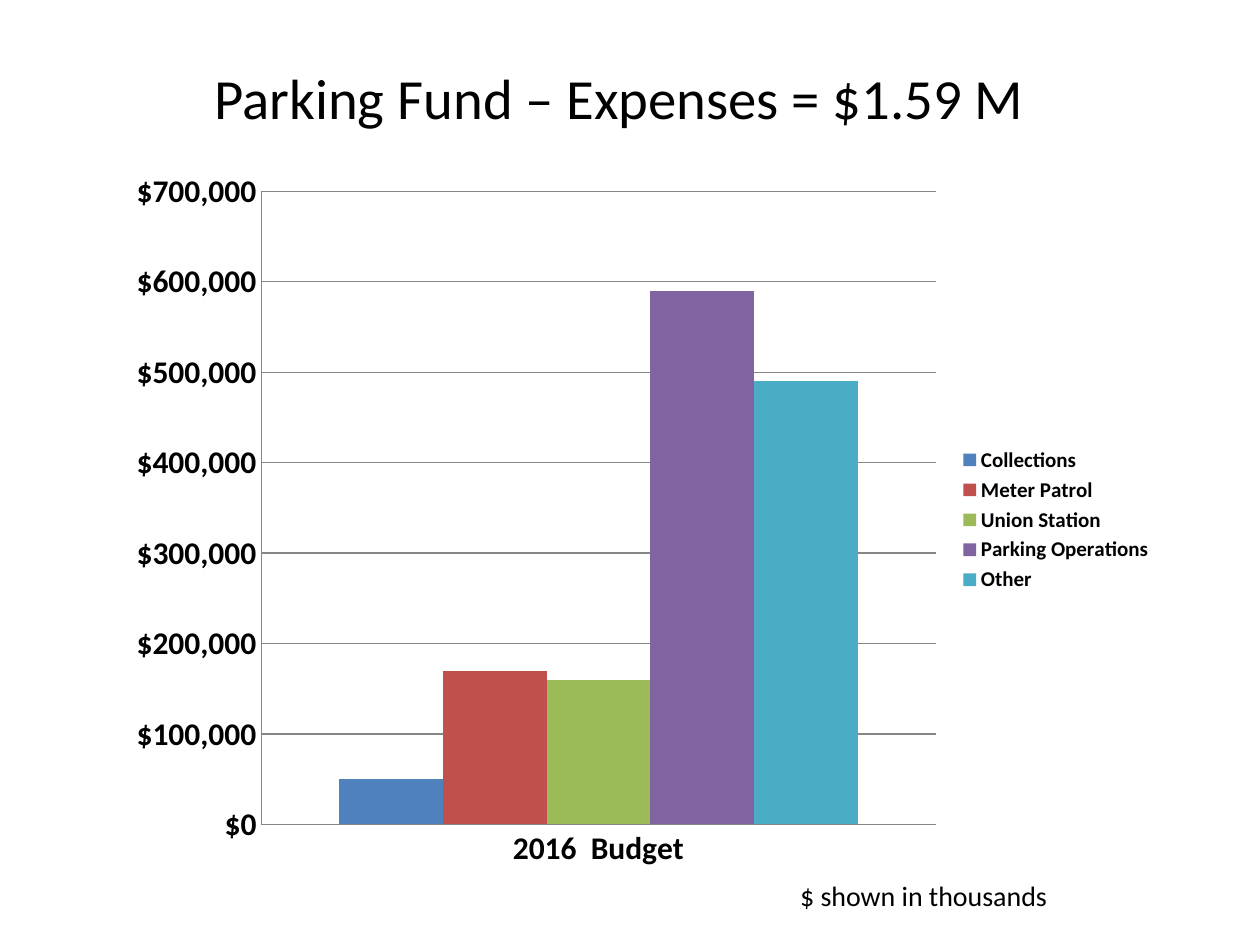
from pptx import Presentation
from pptx.chart.data import CategoryChartData
from pptx.dml.color import RGBColor
from pptx.enum import chart as charts, text
from pptx.util import Cm, Pt


def paint(target, color):
    target.solid()
    target.fore_color.rgb = RGBColor.from_string(color)


def add_text(page, wording, left, top, width, height, size, align, anchor):
    box = page.shapes.add_textbox(Cm(left), Cm(top), Cm(width), Cm(height))
    frame = box.text_frame
    frame.text = wording
    frame.word_wrap = True
    frame.vertical_anchor = anchor
    para = frame.paragraphs[0]
    para.alignment = align
    span = para.runs[0]
    span.font.name = "Calibri"
    span.font.size = Pt(size)
    paint(span.font.fill, "000000")


deck = Presentation()
deck.slide_width = Cm(25.4)
deck.slide_height = Cm(19.05)
page = deck.slides.add_slide(deck.slide_layouts[6])
paint(page.background.fill, "FFFFFF")

add_text(page, "Parking Fund – Expenses = $1.59 M", 1.9, 1.06, 21.17, 1.78, 32.4,
         text.PP_ALIGN.CENTER, text.MSO_ANCHOR.MIDDLE)

expenses = [
    ("Collections", 50000, "4F81BD"),
    ("Meter Patrol", 170000, "C0504D"),
    ("Union Station", 160000, "9BBB59"),
    ("Parking Operations", 590000, "8064A2"),
    ("Other", 490000, "4BACC6"),
]
data = CategoryChartData(number_format='"$"#,##0')
data.categories = ["2016  Budget"]
for name, amount, color in expenses:
    data.add_series(name, [amount])

chart = page.shapes.add_chart(charts.XL_CHART_TYPE.COLUMN_CLUSTERED,
                              Cm(2.33), Cm(3.18), Cm(21.17), Cm(14.6), data).chart
chart.has_title = False
chart.font.name = "Calibri"
chart.font.size = Pt(18)
paint(chart.font.fill, "000000")

plot = chart.plots[0]
plot.gap_width = 150
plot.overlap = 0
plot.vary_by_categories = False
for series, (name, amount, color) in zip(plot.series, expenses):
    paint(series.format.fill, color)

amounts = chart.value_axis
amounts.minimum_scale = 0
amounts.maximum_scale = 700000
amounts.major_unit = 100000
amounts.has_major_gridlines = True
amounts.tick_labels.number_format = '"$"#,##0'
amounts.tick_labels.number_format_is_linked = False
for axis in (chart.category_axis, amounts):
    axis.major_tick_mark = charts.XL_TICK_MARK.NONE
    axis.minor_tick_mark = charts.XL_TICK_MARK.NONE
    axis.tick_labels.font.bold = True
    axis.tick_labels.font.size = Pt(18)
for line in (chart.category_axis.format.line, amounts.format.line,
             amounts.major_gridlines.format.line):
    paint(line.fill, "868686")
    line.width = Pt(0.75)

chart.has_legend = True
chart.legend.position = charts.XL_LEGEND_POSITION.RIGHT
chart.legend.include_in_layout = False
chart.legend.font.size = Pt(12)
chart.legend.font.bold = True

add_text(page, "$ shown in thousands", 15.88, 17.58, 6.55, 0.94, 16,
         text.PP_ALIGN.LEFT, text.MSO_ANCHOR.TOP)

deck.save("out.pptx")
